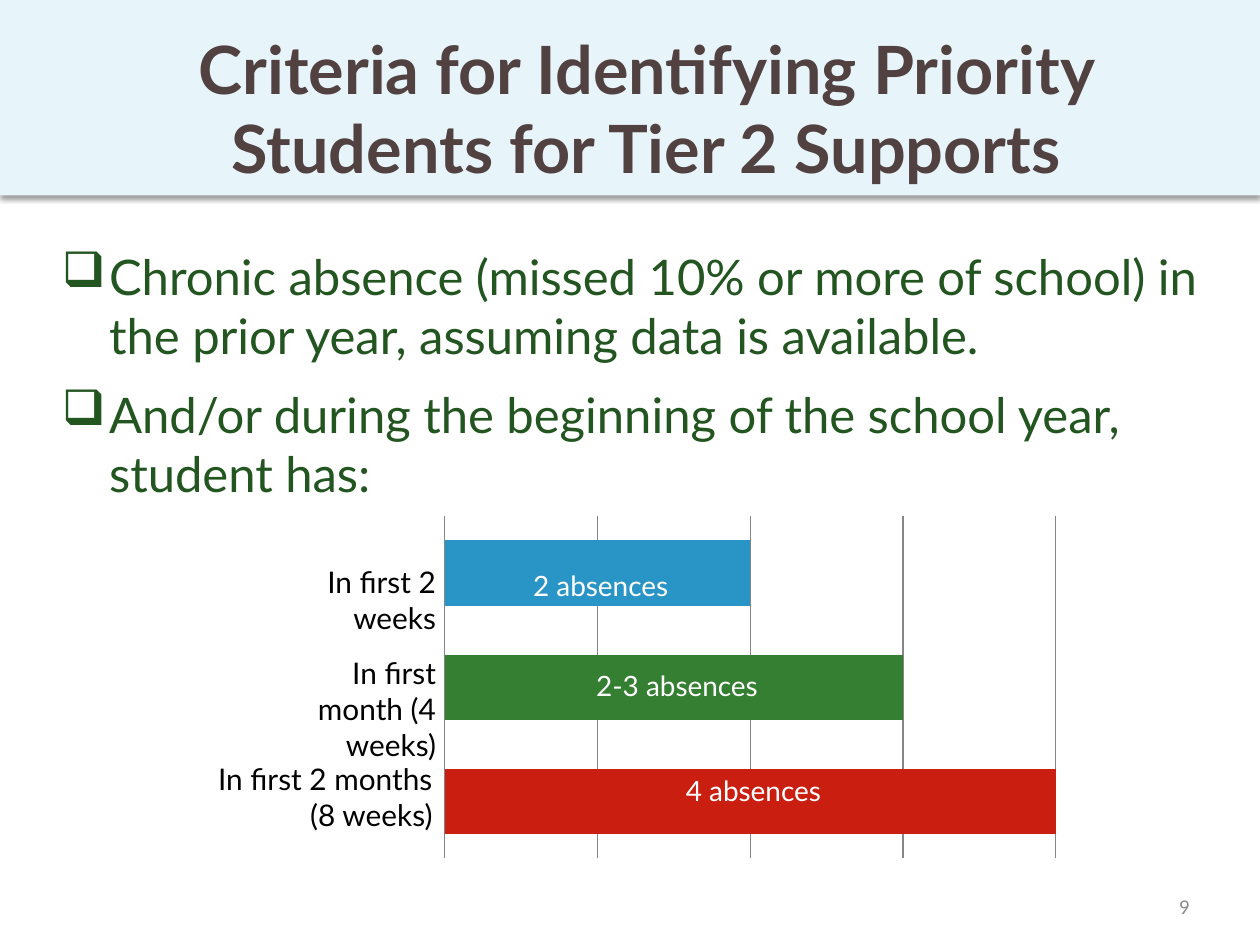
from dataclasses import dataclass

from lxml import etree
from pptx import Presentation
from pptx import util as u
from pptx.chart import data as cd
from pptx.dml import color
from pptx.enum import chart as ch
from pptx.enum import shapes, text
from pptx.oxml import ns, parse_xml

LEFT, MID, RIGHT = text.PP_ALIGN.LEFT, text.PP_ALIGN.CENTER, text.PP_ALIGN.RIGHT


@dataclass(frozen=True)
class Theme:
    """Colours, fonts and type sizes."""
    band: str = "E7F4FA"
    head: str = "514141"
    body: str = "235521"
    ink: str = "000000"
    pale: str = "FFFFFF"
    grey: str = "8C8C8C"
    grid: str = "868686"
    bars: tuple = ("CA1E10", "347F31", "2995C7")
    font: str = "Lato"
    plain: str = "Calibri"
    big: int = 38
    main: int = 28
    label: int = 17
    value: int = 16
    small: int = 12


class Deck:
    """Holds the theme and the current slide."""

    def __init__(self, theme):
        """Open a 4:3 deck with one title-only slide."""
        self.theme = theme
        self.file = Presentation()
        self.file.slide_width, self.file.slide_height = u.Cm(25.4), u.Cm(19.05)
        self.slide = self.file.slides.add_slide(self.file.slide_layouts[5])

    def paint(self, para, size, tone, align, font=None, bold=False):
        """Format a paragraph and its runs."""
        para.alignment = align
        for run in para.runs:
            run.font.name, run.font.size = font or self.theme.font, u.Pt(size)
            run.font.bold = bold
            run.font.color.rgb = color.RGBColor.from_string(tone)

    def band(self, wide, high):
        """Draw the shaded band behind the title."""
        box = self.slide.shapes.add_shape(
            shapes.MSO_SHAPE.RECTANGLE, 0, 0, u.Cm(wide), u.Cm(high))
        box.fill.solid()
        box.fill.fore_color.rgb = color.RGBColor.from_string(self.theme.band)
        box.line.fill.background()
        box._element.spPr.append(parse_xml(
            f'<a:effectLst {ns.nsdecls("a")}><a:outerShdw blurRad="{u.Pt(3.1)}" '
            f'dist="{u.Pt(1.6)}" dir="5400000" rotWithShape="0"><a:srgbClr val="000000">'
            '<a:alpha val="38000"/></a:srgbClr></a:outerShdw></a:effectLst>'))
        self.slide.shapes._spTree.insert(2, box._element)

    def title(self, words, place):
        """Place and format the title."""
        head = self.slide.shapes.title
        head.left, head.top, head.width, head.height = map(u.Cm, place)
        frame = head.text_frame
        frame.text = words
        frame.auto_size = text.MSO_AUTO_SIZE.NONE
        frame.vertical_anchor = text.MSO_ANCHOR.TOP
        self.paint(frame.paragraphs[0], self.theme.big, self.theme.head, MID, bold=True)

    def text(self, words, place, size, tone, align, font=None, anchor=text.MSO_ANCHOR.TOP):
        """Add a wrapped text box."""
        frame = self.slide.shapes.add_textbox(*map(u.Cm, place)).text_frame
        frame.word_wrap = True
        frame.vertical_anchor = anchor
        frame.text = words
        for para in frame.paragraphs:
            self.paint(para, size, tone, align, font)
        return frame

    def list(self, items, place):
        """Add a list with box bullets."""
        size = self.theme.main
        frame = self.text("\n".join(items), place, size, self.theme.body, LEFT)
        for rank, para in enumerate(frame.paragraphs):
            para.space_before = u.Pt(size * 0.2 if rank else 0)
            para.space_after = u.Pt(6)
            props = para._p.get_or_add_pPr()
            props.set("marL", str(u.Cm(0.95)))
            props.set("indent", str(u.Cm(-0.95)))
            etree.SubElement(props, ns.qn("a:buChar")).set("char", "❑")

    def chart(self, names, vals, place):
        """Add a bar chart with one colour for each bar."""
        data = cd.CategoryChartData()
        data.categories = names
        data.add_series("Series 1", vals)
        chart = self.slide.shapes.add_chart(
            ch.XL_CHART_TYPE.BAR_STACKED, *map(u.Cm, place), data).chart
        chart.has_legend = chart.has_title = False
        chart.font.name, chart.font.size = self.theme.plain, u.Pt(18)
        chart.font.color.rgb = color.RGBColor.from_string(self.theme.ink)
        chart.category_axis.visible = False
        axis = chart.value_axis
        axis.visible = False
        axis.minimum_scale, axis.maximum_scale, axis.major_unit = 0, 100, 25
        axis.has_major_gridlines = True
        line = axis.major_gridlines.format.line
        line.width = u.Pt(0.75)
        line.color.rgb = color.RGBColor.from_string(self.theme.grid)
        plot = chart.plots[0]
        plot.gap_width, plot.overlap, plot.vary_by_categories = 75, 100, False
        for rank, tone in enumerate(self.theme.bars):
            fill = plot.series[0].points[rank].format.fill
            fill.solid()
            fill.fore_color.rgb = color.RGBColor.from_string(tone)


def main():
    """Build and save the slide."""
    look = Theme()
    deck = Deck(look)
    deck.band(25.4, 3.94)
    deck.title("Criteria for Identifying Priority Students for Tier 2 Supports",
               (1.83, 0.43, 22.4, 3.5))
    deck.list(("Chronic absence (missed 10% or more of school) in the prior year, "
               "assuming data is available.",
               "And/or during the beginning of the school year, student has:"),
              (1, 4.85, 23.6, 12.57))
    deck.text("9", (18.31, 17.75, 5.92, 1.02), look.small, look.grey, RIGHT,
              look.plain, text.MSO_ANCHOR.MIDDLE)
    deck.chart(("1", "2", "3"), (100, 75, 50), (8.71, 10.26, 12.83, 7.19))
    for words, place in (
            ("In first 2 weeks", (4.57, 11.25, 4.47, 0.99)),
            ("In first month (4 weeks)", (5.03, 13.08, 4.01, 1.7)),
            ("In first 2 months (8 weeks)", (3.94, 15.21, 5.03, 1.7))):
        deck.text(words, place, look.label, look.ink, RIGHT)
    for rank, (words, top) in enumerate((
            ("2 absences", 11.33), ("2-3 absences", 13.36), ("4 absences", 15.47))):
        deck.text(words, (9.75 + 1.54 * rank, top, 4.72, 0.94),
                  look.value, look.pale, MID)
    deck.file.save("out.pptx")


if __name__ == "__main__":
    main()
